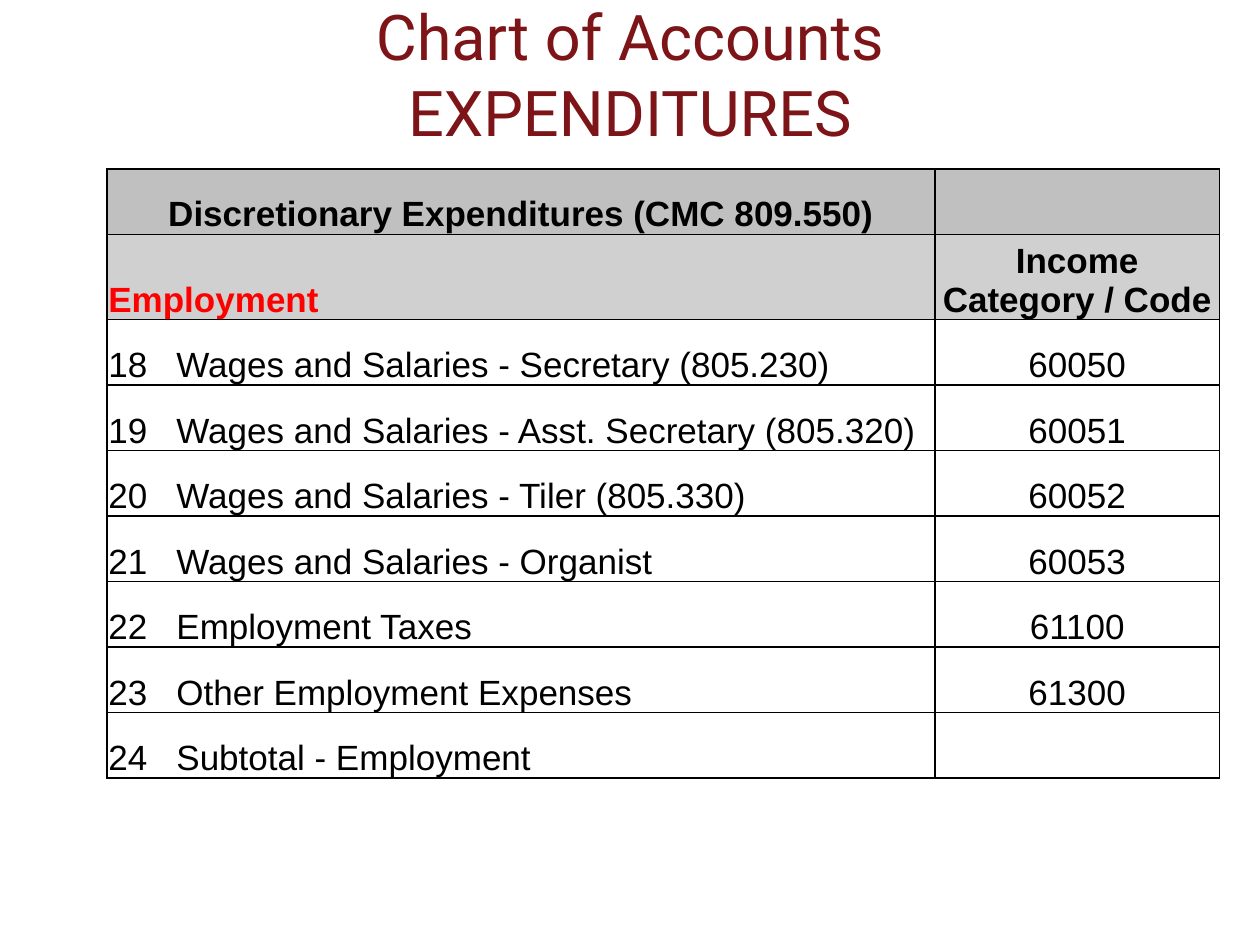
"""Build the slide listing employment expenditure accounts."""
from lxml.etree import SubElement
from pptx import Presentation
from pptx.dml.color import RGBColor
from pptx.enum.text import MSO_ANCHOR, PP_ALIGN
from pptx.oxml.ns import qn
from pptx.util import Inches, Pt

TITLE = "Chart of Accounts\vEXPENDITURES"
HEADS = [
    ("Discretionary Expenditures (CMC 809.550)", "", "C0C0C0"),
    ("Employment", "Income Category / Code", "D0D0D0"),
]
ITEMS = [
    ("Wages and Salaries - Secretary (805.230)", "60050"),
    ("Wages and Salaries - Asst. Secretary (805.320)", "60051"),
    ("Wages and Salaries - Tiler (805.330)", "60052"),
    ("Wages and Salaries - Organist", "60053"),
    ("Employment Taxes", "61100"),
    ("Other Employment Expenses", "61300"),
    ("Subtotal - Employment", ""),
]
FIRST = 18
WIDTHS = (6.57, 2.26)
ROW, TALL = 0.52, 0.62


def color(code):
    """Turn a hex string into a colour."""
    return RGBColor.from_string(code)


def style(par, font, size, code, bold=False, align=PP_ALIGN.LEFT):
    """Format a paragraph and its runs."""
    par.alignment = align
    for run in par.runs:
        run.font.name, run.font.size, run.font.bold = font, Pt(size), bold
        run.font.color.rgb = color(code)


def border(cell):
    """Draw a thin black line on each side of a cell."""
    props = cell._tc.get_or_add_tcPr()
    for side in ("lnL", "lnR", "lnT", "lnB"):
        line = SubElement(props, qn(f"a:{side}"), w=str(Pt(1)))
        fill = SubElement(line, qn("a:solidFill"))
        SubElement(fill, qn("a:srgbClr"), val="000000")


def tab(par, spot):
    """Add a left tab stop to a paragraph."""
    stops = SubElement(par._p.get_or_add_pPr(), qn("a:tabLst"))
    SubElement(stops, qn("a:tab"), pos=str(Inches(spot)), algn="l")


def put(cell, text, fill, code, bold, align):
    """Fill one table cell."""
    border(cell)
    if fill:
        cell.fill.solid()
        cell.fill.fore_color.rgb = color(fill)
    else:
        cell.fill.background()
    cell.vertical_anchor = MSO_ANCHOR.BOTTOM
    cell.margin_left = cell.margin_right = cell.margin_top = Inches(0.01)
    cell.margin_bottom = 0
    cell.text_frame.text = text
    par = cell.text_frame.paragraphs[0]
    if "\t" in text:
        tab(par, 0.54)
    style(par, "Arial", 20, code, bold, align)


def title(slide):
    """Add the two-line heading."""
    box = slide.shapes.add_textbox(Inches(0.5), 0, Inches(9), Inches(1.16))
    frame = box.text_frame
    frame.word_wrap = True
    frame.margin_top = frame.margin_bottom = 0
    frame.vertical_anchor = MSO_ANCHOR.MIDDLE
    frame.text = TITLE
    style(frame.paragraphs[0], "Roboto", 36, "7D1418", align=PP_ALIGN.CENTER)


def accounts(slide):
    """Add the table of accounts."""
    rows = HEADS + [(f"{num}\t{name}", code, None)
                    for num, (name, code) in enumerate(ITEMS, FIRST)]
    high = ROW * (len(rows) - 1) + TALL
    table = slide.shapes.add_table(
        len(rows), len(WIDTHS), Inches(0.85), Inches(1.34),
        Inches(sum(WIDTHS)), Inches(high)).table
    table.first_row = table.horz_banding = False
    for col, wide in zip(table.columns, WIDTHS):
        col.width = Inches(wide)
    for i, (name, code, fill) in enumerate(rows):
        table.rows[i].height = Inches(TALL if i == 1 else ROW)
        side = PP_ALIGN.LEFT if i else PP_ALIGN.CENTER
        ink = "FF0000" if i == 1 else "000000"
        bold = i < len(HEADS)
        put(table.cell(i, 0), name, fill, ink, bold, side)
        put(table.cell(i, 1), code, fill, "000000", bold, PP_ALIGN.CENTER)


def main():
    """Build and save the slide."""
    deck = Presentation()
    deck.slide_width, deck.slide_height = Inches(10), Inches(7.5)
    slide = deck.slides.add_slide(deck.slide_layouts[6])
    title(slide)
    accounts(slide)
    deck.save("out.pptx")


if __name__ == "__main__":
    main()
